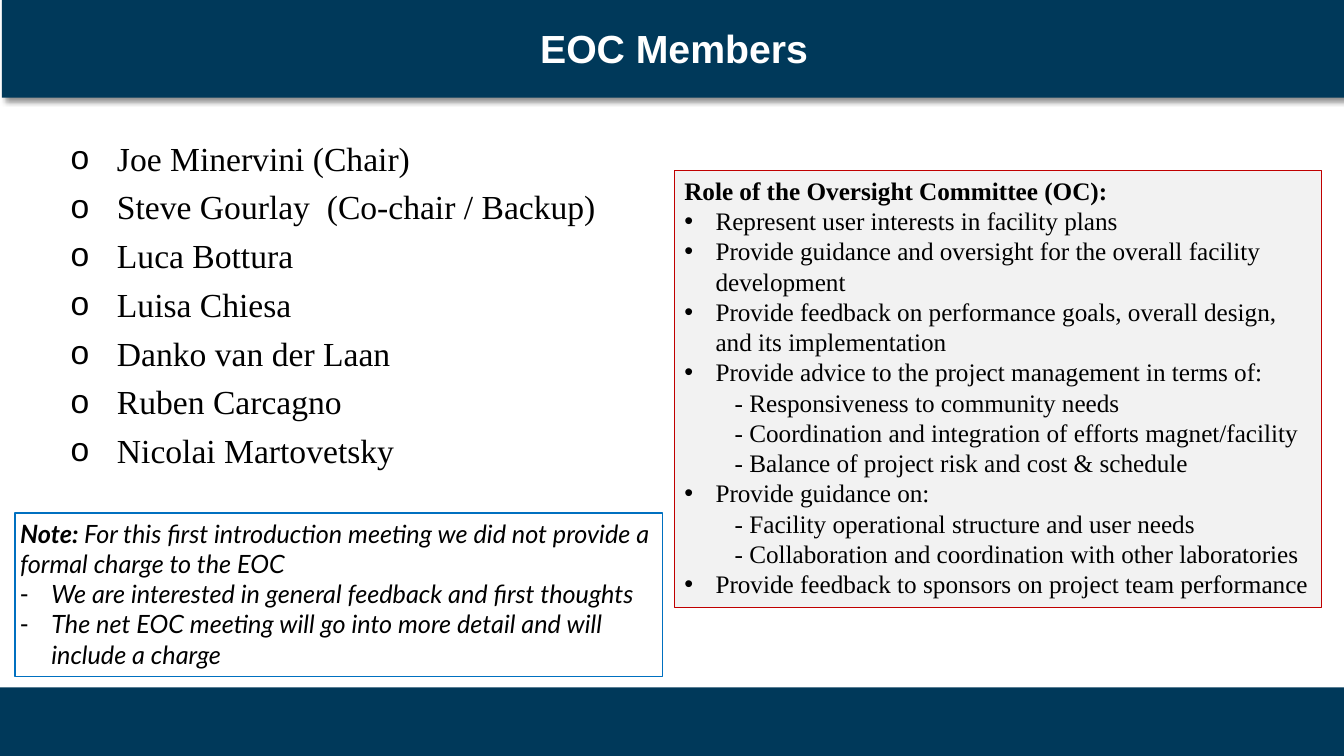
import pptx
import pptx.dml.color
import pptx.enum.shapes
import pptx.enum.text
import pptx.oxml
import pptx.oxml.ns
import pptx.util
from dataclasses import dataclass

COLS, ROWS = 80, 45


@dataclass
class Theme:
    navy: str = "00395A"
    white: str = "FFFFFF"
    black: str = "000000"
    gray: str = "F2F2F2"
    red: str = "C00000"
    blue: str = "0070C0"
    sans: str = "Arial"
    serif: str = "Times New Roman"
    hand: str = "Lato"
    head: int = 28
    name: int = 24
    body: int = 18


def color(code):
    return pptx.dml.color.RGBColor.from_string(code)


def node(tag, **attrs):
    made = pptx.oxml.parse_xml(f"<a:{tag} {pptx.oxml.ns.nsdecls('a')}/>")
    for key, value in attrs.items():
        made.set(key, str(value))
    return made


class Deck:
    def __init__(self, theme):
        self.theme = theme
        self.file = pptx.Presentation()
        self.file.slide_width = pptx.util.Inches(13.33)
        self.file.slide_height = pptx.util.Inches(7.5)
        self.slide = self.file.slides.add_slide(self.file.slide_layouts[6])

    def place(self, left, top, width, height):
        """Turn columns and rows into slide lengths."""
        col = self.file.slide_width / COLS
        row = self.file.slide_height / ROWS
        return [round(n) for n in (left * col, top * row, width * col, height * row)]

    def box(self, area, fill=None, line=None, weight=1):
        kind = pptx.enum.shapes.MSO_SHAPE.RECTANGLE
        shape = self.slide.shapes.add_shape(kind, *self.place(*area))
        shape.shadow.inherit = False
        if fill:
            shape.fill.solid()
            shape.fill.fore_color.rgb = color(fill)
        else:
            shape.fill.background()
        if line:
            shape.line.color.rgb = color(line)
            shape.line.width = pptx.util.Pt(weight)
        else:
            shape.line.fill.background()
        return shape

    def shade(self, shape):
        """Drop a soft shadow to the lower right."""
        effects = shape._element.spPr.find(pptx.oxml.ns.qn("a:effectLst"))
        cast = node("outerShdw", blurRad=pptx.util.Pt(4), dist=pptx.util.Pt(3),
                    dir=45 * 60000, algn="tl", rotWithShape=0)
        tint = node("srgbClr", val=self.theme.black)
        tint.append(node("alpha", val=43000))
        cast.append(tint)
        effects.append(cast)

    def label(self, area):
        return self.slide.shapes.add_textbox(*self.place(*area))

    def bullet(self, para, mark, left, hang):
        props = para._p.get_or_add_pPr()
        props.set("marL", str(pptx.util.Inches(left)))
        if mark:
            props.set("indent", str(-pptx.util.Inches(hang)))
            props.append(node("buFont", typeface=self.theme.sans))
            props.append(node("buChar", char=mark))

    def style(self, run, font, size, ink=None, bold=False, italic=False):
        run.font.name = font
        run.font.size = pptx.util.Pt(size)
        run.font.bold = bold
        run.font.italic = italic
        run.font.color.rgb = color(ink or self.theme.black)

    def text(self, shape, lines, inset=0.05, gap=0, middle=False, **look):
        """Lines are (text, form); form is (mark, left, hang) or None."""
        align = pptx.enum.text.PP_ALIGN
        anchor = pptx.enum.text.MSO_ANCHOR
        frame = shape.text_frame
        frame.word_wrap = True
        frame.vertical_anchor = anchor.MIDDLE if middle else anchor.TOP
        frame.margin_left = frame.margin_right = pptx.util.Inches(inset)
        frame.margin_top = frame.margin_bottom = pptx.util.Inches(0.05)
        frame.text = "\n".join(words for words, _ in lines)
        for spot, (para, (_, form)) in enumerate(zip(frame.paragraphs, lines)):
            para.alignment = align.CENTER if middle else align.LEFT
            para.space_before = pptx.util.Pt(gap if spot else 0)
            if form:
                self.bullet(para, *form)
            for run in para.runs:
                self.style(run, **look)
        return frame.paragraphs


NAMES = ["Joe Minervini (Chair)", "Steve Gourlay  (Co-chair / Backup)",
         "Luca Bottura", "Luisa Chiesa", "Danko van der Laan",
         "Ruben Carcagno", "Nicolai Martovetsky"]

RING, DOT, DASH = ("o", 0.96, 0.46), ("•", 0.31, 0.31), ("-", 0.31, 0.31)
SUB = (None, 0.5, 0)
ROLE = [
    ("Role of the Oversight Committee (OC):", None),
    ("Represent user interests in facility plans", DOT),
    ("Provide guidance and oversight for the overall facility development", DOT),
    ("Provide feedback on performance goals, overall design, and its implementation", DOT),
    ("Provide advice to the project management in terms of:", DOT),
    ("- Responsiveness to community needs", SUB),
    ("- Coordination and integration of efforts magnet/facility", SUB),
    ("- Balance of project risk and cost & schedule", SUB),
    ("Provide guidance on:", DOT),
    ("- Facility operational structure and user needs", SUB),
    ("- Collaboration and coordination with other laboratories", SUB),
    ("Provide feedback to sponsors on project team performance", DOT),
]
NOTE = [
    ("Note: ", None),
    ("We are interested in general feedback and first thoughts", DASH),
    ("The net EOC meeting will go into more detail and will include a charge", DASH),
]
CHARGE = "For this first introduction meeting we did not provide a formal charge to the EOC"


def main():
    theme = Theme()
    deck = Deck(theme)
    deck.box((0, 40.92, COLS, 4.08), theme.navy)

    title = deck.box((0.12, -0.18, COLS, 6), theme.navy)
    deck.shade(title)
    deck.text(title, [("EOC Members", None)], middle=True, font=theme.sans,
              size=theme.head, ink=theme.white, bold=True)

    names = deck.label((0.9, 7.9, 41.2, 29.5))
    deck.text(names, [(name, RING) for name in NAMES], gap=6,
              font=theme.serif, size=theme.name)

    role = deck.box((40.14, 10.14, 38.52, 26.04), theme.gray, theme.red, 0.75)
    paras = deck.text(role, ROLE, inset=0.1, font=theme.serif, size=theme.body)
    paras[0].runs[0].font.bold = True

    note = deck.box((0.9, 30.54, 38.52, 9.72), line=theme.blue)
    look = {"font": theme.hand, "size": theme.body, "italic": True}
    first = deck.text(note, NOTE, **look)[0]
    first.runs[0].font.bold = True
    rest = first.add_run()
    rest.text = CHARGE
    deck.style(rest, **look)

    deck.file.save("out.pptx")


if __name__ == "__main__":
    main()
